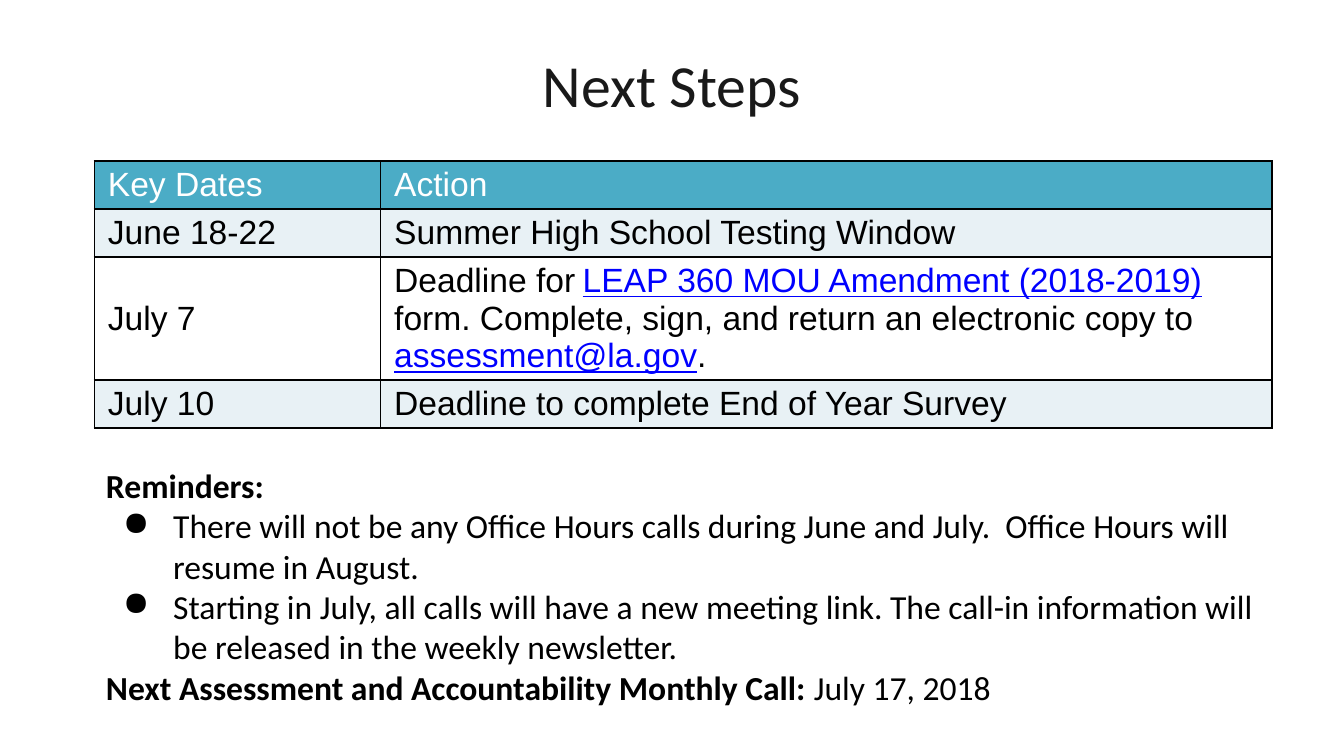
from lxml import etree
from pptx import Presentation
from pptx.dml.color import RGBColor
from pptx.enum import text
from pptx.oxml.ns import qn
from pptx.util import Pt

BLACK, WHITE, BLUE = "000000", "FFFFFF", "0000FF"
TEAL, PALE = "4BACC6", "E8F1F5"
LINK = dict(color=BLUE, line=True)


def paint(hue):
    return RGBColor.from_string(hue)


def write(para, words, size=18, face="Calibri", color=BLACK, bold=False, line=False):
    run = para.add_run()
    run.text = words
    font = run.font
    font.size, font.name = Pt(size), face
    font.bold, font.underline = bold, line
    font.color.rgb = paint(color)


def add_box(slide, left, top, width, height):
    frame = slide.shapes.add_textbox(Pt(left), Pt(top), Pt(width), Pt(height)).text_frame
    frame.word_wrap = True
    return frame


def add_bullet(para):
    props = para._p.get_or_add_pPr()
    props.set("marL", str(Pt(36)))
    props.set("indent", str(-Pt(27)))
    tint = etree.SubElement(props, qn("a:buClr"))
    etree.SubElement(tint, qn("a:srgbClr"), val=BLACK)
    etree.SubElement(props, qn("a:buChar"), char="●")


def add_edge(cell, side, width):
    edge = etree.SubElement(cell._tc.get_or_add_tcPr(), qn("a:ln" + side), w=str(Pt(width)))
    fill = etree.SubElement(edge, qn("a:solidFill"))
    etree.SubElement(fill, qn("a:srgbClr"), val=BLACK)


def fill_cell(cell, parts, fill, color, first):
    cell.vertical_anchor = text.MSO_ANCHOR.MIDDLE
    cell.margin_left = cell.margin_right = Pt(7.2)
    cell.margin_top = cell.margin_bottom = Pt(2.5)
    # The inner vertical rule is thinner than the outer frame
    widths = (1, 0.75, 1, 1) if first else (0.75, 1, 1, 1)
    for side, width in zip("LRTB", widths):
        add_edge(cell, side, width)
    cell.fill.solid()
    cell.fill.fore_color.rgb = paint(fill)
    for words, style in parts:
        write(cell.text_frame.paragraphs[0], words,
              **{"face": "Arial", "color": color, **style})


def add_dates(slide, rows):
    heights = [25.7, 25.7, 65.9, 25.7]
    table = slide.shapes.add_table(len(rows), 2, Pt(50.6), Pt(86.4),
                                   Pt(630.7), Pt(sum(heights))).table
    table.first_row = table.horz_banding = False
    for col, width in zip(table.columns, (153.4, 477.3)):
        col.width = Pt(width)
    for i, (date, action) in enumerate(rows):
        table.rows[i].height = Pt(heights[i])
        fill = TEAL if i == 0 else PALE if i % 2 else WHITE
        color = BLACK if i else WHITE
        fill_cell(table.cell(i, 0), [(date, {})], fill, color, True)
        fill_cell(table.cell(i, 1), action, fill, color, False)


def add_notes(slide, items):
    frame = add_box(slide, 49.7, 245.5, 632.9, 93.6)
    for i, (bullet, parts) in enumerate(items):
        para = frame.add_paragraph() if i else frame.paragraphs[0]
        if bullet:
            add_bullet(para)
        for words, bold in parts:
            write(para, words, bold=bold)


def main():
    deck = Presentation()
    deck.slide_width, deck.slide_height = Pt(720), Pt(405)
    slide = deck.slides.add_slide(deck.slide_layouts[6])

    # Key dates
    add_dates(slide, [
        ("Key Dates", [("Action", {})]),
        ("June 18-22", [("Summer High School Testing Window", {})]),
        ("July 7", [
            ("Deadline for", {}),
            (" ", {"size": 14}),
            ("LEAP 360 MOU Amendment (2018-2019)", LINK),
            (" form. Complete, sign, and return an electronic copy to ", {}),
            ("assessment@la.gov", LINK),
            (".", {}),
        ]),
        ("July 10", [("Deadline to complete End of Year Survey", {})]),
    ])

    # Title
    title = add_box(slide, 0, 22.3, 720, 49.7).paragraphs[0]
    title.alignment = text.PP_ALIGN.CENTER
    write(title, "Next Steps", size=32, color="191919")

    # Reminders
    add_notes(slide, [
        (False, [("Reminders:", True)]),
        (True, [("There will not be any Office Hours calls during June and July.  "
                 "Office Hours will resume in August.", False)]),
        (True, [("Starting in July, all calls will have a new meeting link. The call-in "
                 "information will be released in the weekly newsletter.", False)]),
        (False, [("Next Assessment and Accountability Monthly Call: ", True),
                 ("July 17, 2018", False)]),
    ])

    deck.save("out.pptx")


if __name__ == "__main__":
    main()
